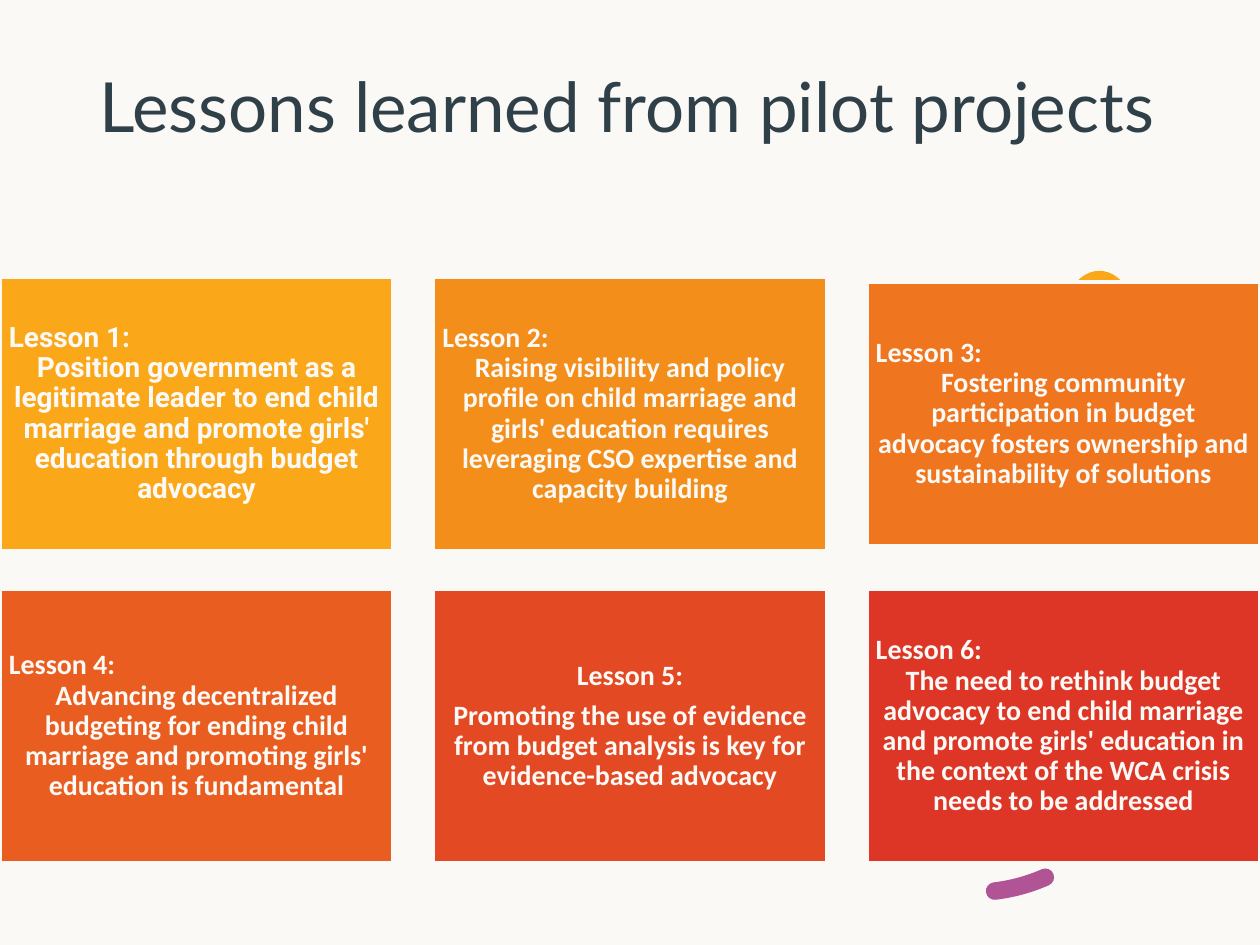
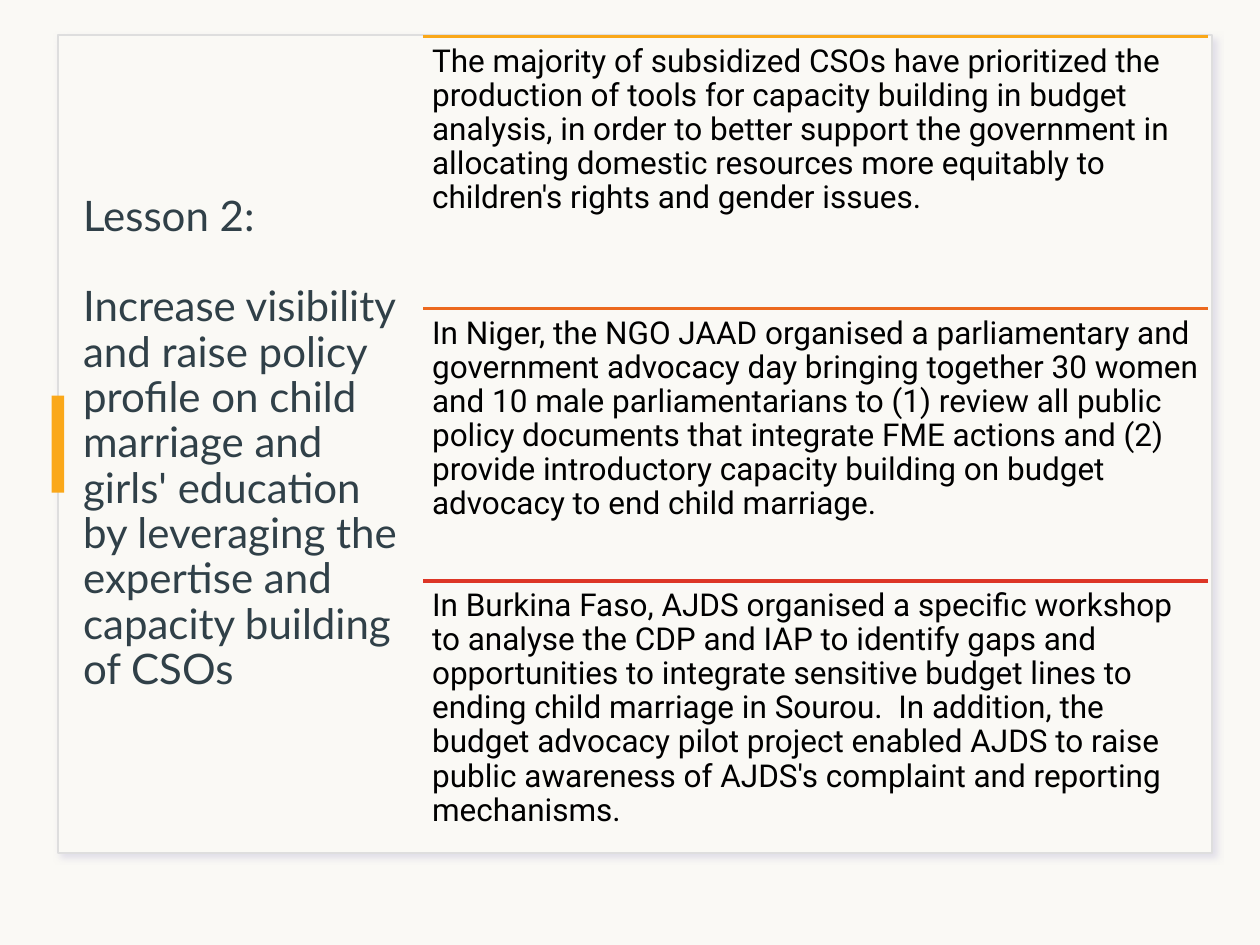
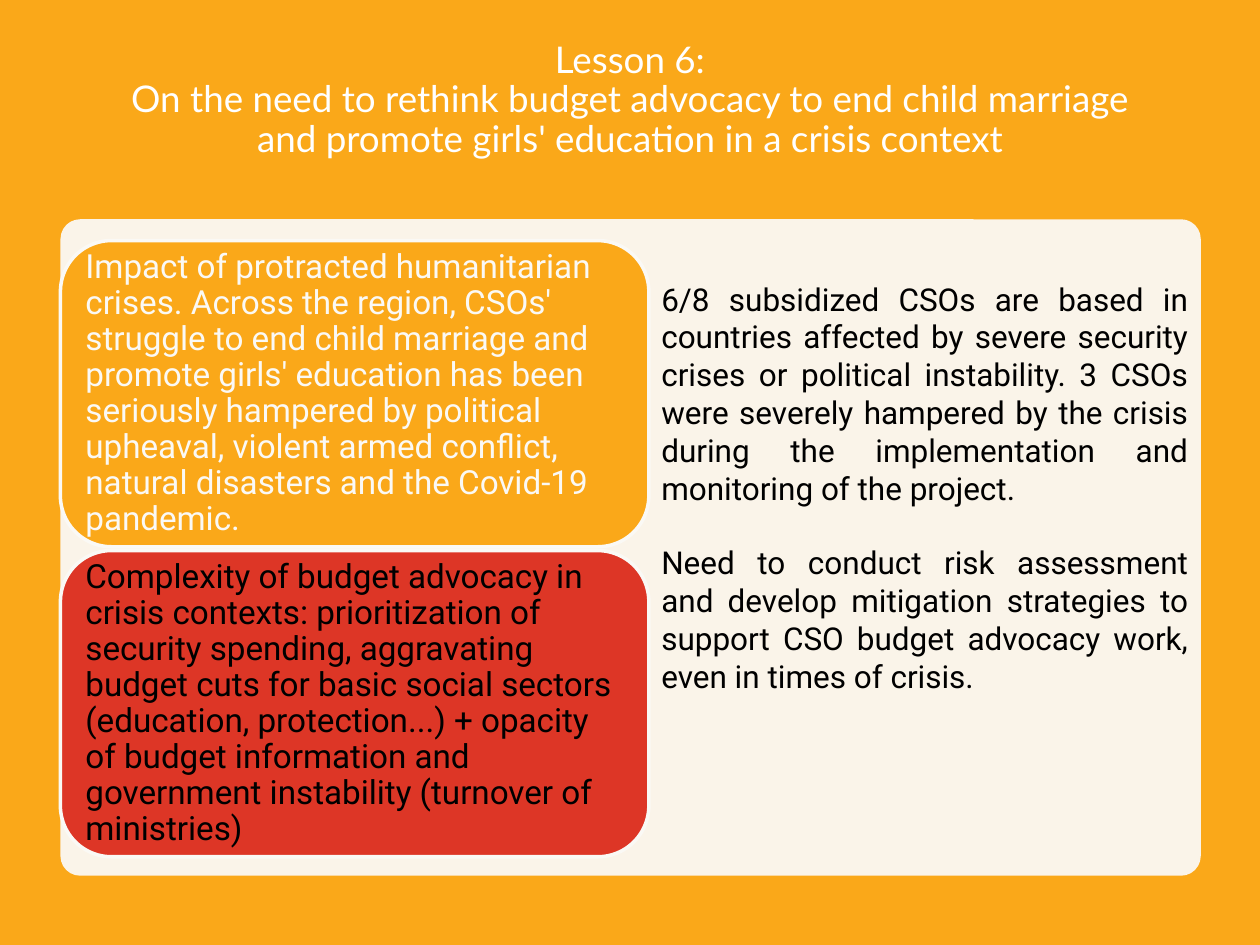
from lxml import etree
from pptx import Presentation
from pptx.dml.color import RGBColor
from pptx.enum.dml import MSO_LINE
from pptx.enum.shapes import MSO_CONNECTOR, MSO_SHAPE
from pptx.enum.text import MSO_ANCHOR, MSO_AUTO_SIZE, PP_ALIGN
from pptx.oxml.ns import qn
from pptx.util import Inches, Pt

LEFT, CENTER, JUSTIFY = PP_ALIGN.LEFT, PP_ALIGN.CENTER, PP_ALIGN.JUSTIFY
TOP, MIDDLE = MSO_ANCHOR.TOP, MSO_ANCHOR.MIDDLE
RECT, ROUNDED = MSO_SHAPE.RECTANGLE, MSO_SHAPE.ROUNDED_RECTANGLE
ARC, OVAL = MSO_SHAPE.ARC, MSO_SHAPE.OVAL
STRAIGHT = MSO_CONNECTOR.STRAIGHT
DASH = MSO_LINE.DASH
NO_AUTOFIT = MSO_AUTO_SIZE.NONE

CREAM = RGBColor(0xFA, 0xF9, 0xF5)
WHITE = RGBColor(0xFF, 0xFF, 0xFF)
BLACK = RGBColor(0x00, 0x00, 0x00)
SLATE = RGBColor(0x30, 0x40, 0x48)
GREY = RGBColor(0xDE, 0xDE, 0xDE)
LILAC = RGBColor(0xC6, 0xC2, 0xDB)
PURPLE = RGBColor(0xAE, 0x4C, 0x90)
AMBER = RGBColor(0xFA, 0xA8, 0x19)
ORANGE = RGBColor(0xEC, 0x69, 0x1F)
RED = RGBColor(0xDD, 0x36, 0x26)
LESSON_COLORS = [AMBER, RGBColor(0xF4, 0x8E, 0x1B), RGBColor(0xEF, 0x75, 0x1E),
                 RGBColor(0xE9, 0x5E, 0x20), RGBColor(0xE3, 0x49, 0x23), RED]

TITLE_FONT, BODY_FONT, CARD_FONT = "Lato", "Roboto", "Calibri"

LESSONS = [
    "Position government as a legitimate leader to end child marriage and promote "
    "girls' education through budget advocacy",
    "Raising visibility and policy profile on child marriage and girls' education "
    "requires leveraging CSO expertise and capacity building",
    "Fostering community participation in budget advocacy fosters ownership and "
    "sustainability of solutions",
    "Advancing decentralized budgeting for ending child marriage and promoting "
    "girls' education is fundamental",
    "Promoting the use of evidence from budget analysis is key for evidence-based "
    "advocacy",
    "The need to rethink budget advocacy to end child marriage and promote girls' "
    "education in the context of the WCA crisis needs to be addressed",
]
VISIBILITY_TITLE = [
    "Lesson 2:",
    "Increase visibility and raise policy profile on child marriage and girls' "
    "education by leveraging the expertise and capacity building of CSOs",
]
VISIBILITY_EXAMPLES = [
    (AMBER, "The majority of subsidized CSOs have prioritized the production of tools "
     "for capacity building in budget analysis, in order to better support the "
     "government in allocating domestic resources more equitably to children's "
     "rights and gender issues."),
    (ORANGE, "In Niger, the NGO JAAD organised a parliamentary and government advocacy "
     "day bringing together 30 women and 10 male parliamentarians to (1) review all "
     "public policy documents that integrate FME actions and (2) provide "
     "introductory capacity building on budget advocacy to end child marriage."),
    (RED, "In Burkina Faso, AJDS organised a specific workshop to analyse the CDP and "
     "IAP to identify gaps and opportunities to integrate sensitive budget lines to "
     "ending child marriage in Sourou.  In addition, the budget advocacy pilot "
     "project enabled AJDS to raise public awareness of AJDS's complaint and "
     "reporting mechanisms."),
]
CRISIS_TITLE = [
    "Lesson 6:",
    "On the need to rethink budget advocacy to end child marriage and promote girls' "
    "education in a crisis context",
]
CRISIS_CHALLENGES = [
    (AMBER, CREAM, "Impact of protracted humanitarian crises. Across the region, CSOs' "
     "struggle to end child marriage and promote girls' education has been seriously "
     "hampered by political upheaval, violent armed conflict, natural disasters and "
     "the Covid-19 pandemic."),
    (RED, BLACK, "Complexity of budget advocacy in crisis contexts: prioritization of "
     "security spending, aggravating budget cuts for basic social sectors "
     "(education, protection...) + opacity of budget information and government "
     "instability (turnover of ministries)"),
]
CRISIS_FINDINGS = [
    "6/8 subsidized CSOs are based in countries affected by severe security crises or "
    "political instability. 3 CSOs were severely hampered by the crisis during the "
    "implementation and monitoring of the project.",
    "Need to conduct risk assessment and develop mitigation strategies to support CSO "
    "budget advocacy work, even in times of crisis.",
]


def inches(box):
    return [Inches(length) for length in box]


def write(frame, texts, size, color, font=BODY_FONT, align=LEFT, anchor=TOP,
          spacing=0.9, gap=0, bold=False, inset=None):
    """Fill a text frame with one paragraph per text, gap points apart."""
    frame.word_wrap = True
    frame.auto_size = NO_AUTOFIT
    frame.vertical_anchor = anchor
    if inset is not None:
        frame.margin_left = frame.margin_right = Inches(inset)
        frame.margin_top = frame.margin_bottom = Inches(inset)
    for index, text in enumerate(texts):
        paragraph = frame.add_paragraph() if index else frame.paragraphs[0]
        paragraph.text = text
        paragraph.alignment = align
        paragraph.line_spacing = spacing
        paragraph.space_before = Pt(gap if index else 0)
        paragraph.font.name = font
        paragraph.font.size = Pt(size)
        paragraph.font.bold = bold
        paragraph.font.color.rgb = color


def set_title(slide, box, texts, size, color=SLATE, align=LEFT, gap=0):
    title = slide.shapes.title
    title.left, title.top, title.width, title.height = inches(box)
    write(title.text_frame, texts, size, color, TITLE_FONT, align, MIDDLE, gap=gap)


def add_block(slide, kind, box, fill, outline=None, width=2):
    block = slide.shapes.add_shape(kind, *inches(box))
    block.shadow.inherit = False
    block.fill.solid()
    block.fill.fore_color.rgb = fill
    if outline is None:
        block.line.fill.background()
    else:
        block.line.color.rgb = outline
        block.line.width = Pt(width)
    return block


def set_alpha(element, percent):
    """Make the first colour inside an element partly transparent."""
    color = next(element.iter(qn("a:srgbClr")))
    etree.SubElement(color, qn("a:alpha")).set("val", str(percent * 1000))


def add_soft_shadow(shape, color):
    effects = shape.element.spPr.find(qn("a:effectLst"))
    shadow = etree.SubElement(effects, qn("a:outerShdw"), blurRad=str(Pt(4)),
                              dist=str(Pt(3)), dir=str(45 * 60000))
    etree.SubElement(shadow, qn("a:srgbClr"), val=str(color))
    set_alpha(shadow, 50)


def add_rule(slide, left, top, width, color):
    rule = slide.shapes.add_connector(STRAIGHT, *inches((left, top, left + width, top)))
    rule.line.color.rgb = color
    rule.line.width = Pt(2)
    etree.SubElement(rule.element.spPr, qn("a:effectLst"))


def add_dashed_arc(slide, box):
    arc = slide.shapes.add_shape(ARC, *inches(box))
    arc.shadow.inherit = False
    arc.adjustments[0], arc.adjustments[1] = 162, 200.93
    arc.rotation = 353.2
    arc.element.spPr.xfrm.set("flipV", "1")
    arc.fill.background()
    arc.line.color.rgb = PURPLE
    arc.line.width = Pt(10)
    arc.line.dash_style = DASH
    outline = arc.element.spPr.find(qn("a:ln"))
    outline.set("cap", "rnd")
    set_alpha(outline, 95)


def add_lesson_grid(slide, box):
    left, top, width, height = box
    columns, gap = 3, 0.32
    card_width = (width - (columns - 1) * gap) / columns
    row_pitch = height - 2.17
    for index, (text, fill) in enumerate(zip(LESSONS, LESSON_COLORS)):
        number = index + 1
        row, column = divmod(index, columns)
        trim = 0.04 if number == 3 else 0
        card = add_block(slide, RECT,
                         (left + column * (card_width + gap), top + row * row_pitch + trim,
                          card_width, 2.17 - 2 * trim), fill, CREAM)
        spread = number == 5
        write(card.text_frame, [f"Lesson {number}:", text], 16, CREAM,
              BODY_FONT if number == 1 else CARD_FONT, CENTER, MIDDLE,
              gap=5.6 if spread else 0, bold=True, inset=0.07)
        if not spread:
            card.text_frame.paragraphs[0].alignment = LEFT


def add_examples(slide, box):
    left, top, width, height = box
    step = height / len(VISIBILITY_EXAMPLES)
    for index, (color, text) in enumerate(VISIBILITY_EXAMPLES):
        y = top + index * step
        add_rule(slide, left, y, width, color)
        example = slide.shapes.add_textbox(*inches((left, y, width, step)))
        write(example.text_frame, [text], 18, BLACK, inset=0.07)


def add_challenges(slide, box):
    left, top, width, height = box
    gap = 0.03
    card_height = (height - gap) / len(CRISIS_CHALLENGES)
    for index, (fill, color, text) in enumerate(CRISIS_CHALLENGES):
        card = add_block(slide, ROUNDED,
                         (left, top + index * (card_height + gap), width, card_height),
                         fill, CREAM)
        write(card.text_frame, [text], 19, color, anchor=MIDDLE, inset=0.08)


def build_overview(slide):
    set_title(slide, (0.69, 0.32, 8.62, 1.1), ["Lessons learned from pilot projects"], 39.5)
    add_dashed_arc(slide, (5.73, 2.11, 3.74, 4.98))
    add_block(slide, OVAL, (8.45, 2.15, 0.55, 0.71), AMBER)
    add_lesson_grid(slide, (0, 2.2, 10, 4.65))


def build_visibility(slide):
    panel = add_block(slide, RECT, (0.46, 0.28, 9.16, 6.49), CREAM, GREY, 1)
    add_soft_shadow(panel, LILAC)
    # The title placeholder comes first in the tree, so lift it above the panel.
    panel.element.addnext(slide.shapes.title.element)
    set_title(slide, (0.56, 0.55, 2.75, 5.95), VISIBILITY_TITLE, 24, gap=26)
    add_block(slide, RECT, (0.41, 3.14, 0.1, 0.77), AMBER)
    add_examples(slide, (3.36, 0.29, 6.23, 6.48))


def build_crisis(slide):
    backdrop = add_block(slide, RECT, (0, 0, 10, 7.5), AMBER)
    backdrop.element.addnext(slide.shapes.title.element)
    set_title(slide, (0.69, 0, 8.62, 1.6), CRISIS_TITLE, 21, WHITE, CENTER)
    panel = add_block(slide, ROUNDED, (0.48, 1.74, 9.05, 5.21), CREAM)
    panel.adjustments[0] = 0.03
    set_alpha(panel.element.spPr, 95)
    add_challenges(slide, (0.48, 1.91, 4.67, 4.89))
    findings = slide.shapes.add_textbox(*inches((5.15, 2.17, 4.38, 3.43)))
    write(findings.text_frame, CRISIS_FINDINGS, 18, BLACK, align=JUSTIFY,
          spacing=1.0, gap=21)


def main():
    prs = Presentation()
    prs.slide_width, prs.slide_height = Inches(10), Inches(7.5)
    background = prs.slide_master.background.fill
    background.solid()
    background.fore_color.rgb = CREAM
    title_only = prs.slide_layouts[5]
    for build in (build_overview, build_visibility, build_crisis):
        build(prs.slides.add_slide(title_only))
    prs.save("out.pptx")


if __name__ == "__main__":
    main()
